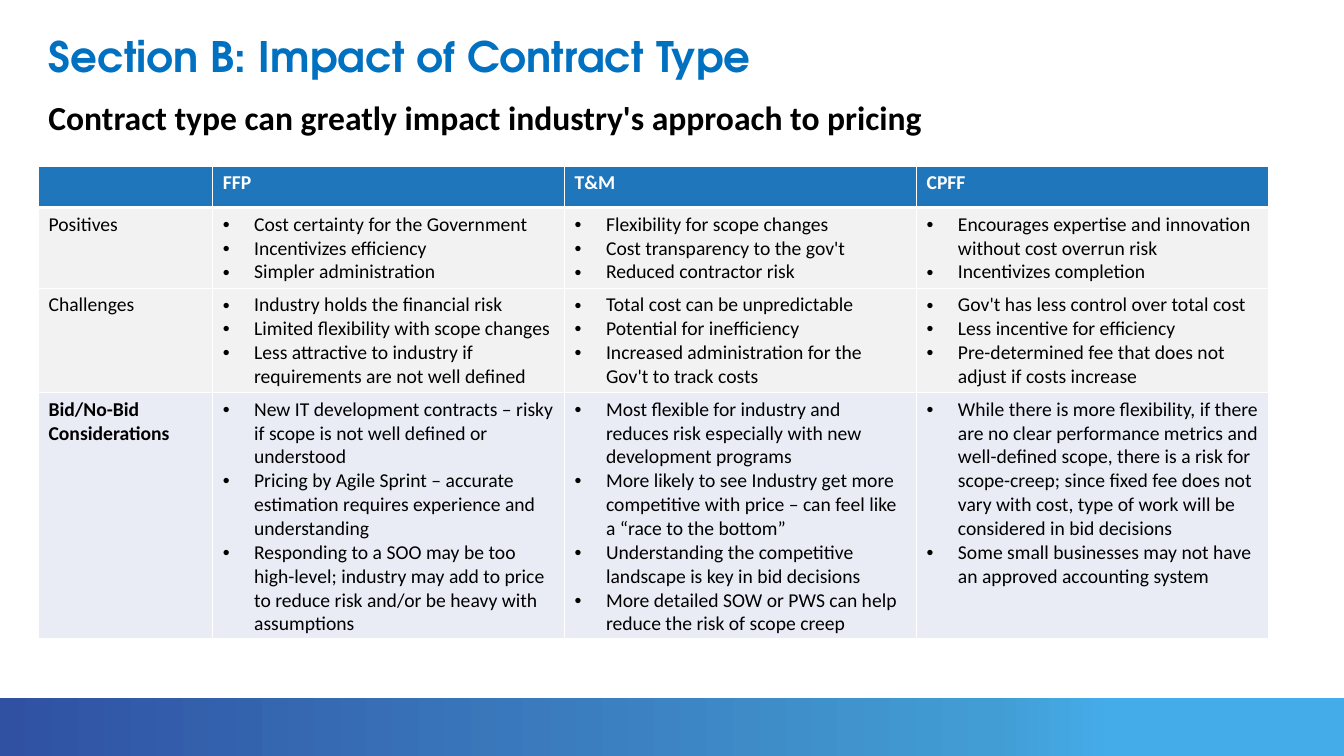
import dataclasses

import lxml.etree
import pptx
import pptx.dml.color
import pptx.enum.shapes
import pptx.enum.text
import pptx.oxml.ns
import pptx.util

Cm = pptx.util.Cm
Pt = pptx.util.Pt
qn = pptx.oxml.ns.qn

COLORS = {
    "title": "0070C0",
    "black": "000000",
    "white": "FFFFFF",
    "header": "2076BB",
    "grey": "F2F2F2",
    "lavender": "E9EBF5",
}
BAR_STOPS = {0: "3051A2", 74: "429DD4", 83: "45ACEA", 100: "45ACEA"}
BODY_FONT = "Calibri"
LEFT = Cm(0.97)
COLUMN_WIDTHS = [4.39, 8.87, 8.87, 8.87]
BULLET_INDENT = Cm(0.79)


@dataclasses.dataclass
class TableRow:
    label: str
    cells: list[list[str]]
    height: float
    fill: str
    label_bold: bool = False


HEADINGS = ["", "FFP", "T&M", "CPFF"]
HEADER_HEIGHT = 1.04
ROWS = [
    TableRow("Positives", [
        ["Cost certainty for the Government", "Incentivizes efficiency",
         "Simpler administration"],
        ["Flexibility for scope changes", "Cost transparency to the gov't",
         "Reduced contractor risk"],
        ["Encourages expertise and innovation without cost overrun risk",
         "Incentivizes completion"],
    ], 2.02, "grey"),
    TableRow("Challenges", [
        ["Industry holds the financial risk",
         "Limited flexibility with scope changes",
         "Less attractive to industry if requirements are not well defined"],
        ["Total cost can be unpredictable", "Potential for inefficiency",
         "Increased administration for the Gov't to track costs"],
        ["Gov't has less control over total cost",
         "Less incentive for efficiency",
         "Pre-determined fee that does not adjust if costs increase"],
    ], 2.6, "grey"),
    TableRow("Bid/No-Bid Considerations", [
        ["New IT development contracts – risky if scope is not well defined "
         "or understood",
         "Pricing by Agile Sprint – accurate estimation requires experience "
         "and understanding",
         "Responding to a SOO may be too high-level; industry may add to "
         "price to reduce risk and/or be heavy with assumptions"],
        ["Most flexible for industry and reduces risk especially with new "
         "development programs",
         "More likely to see Industry get more competitive with price – can "
         "feel like a “race to the bottom”",
         "Understanding the competitive landscape is key in bid decisions",
         "More detailed SOW or PWS can help reduce the risk of scope creep"],
        ["While there is more flexibility, if there are no clear performance "
         "metrics and well-defined scope, there is a risk for scope-creep; "
         "since fixed fee does not vary with cost, type of work will be "
         "considered in bid decisions",
         "Some small businesses may not have an approved accounting system"],
    ], 6.2, "lavender", label_bold=True),
]


def rgb(name: str) -> pptx.dml.color.RGBColor:
    return pptx.dml.color.RGBColor.from_string(COLORS[name])


def style(para, size: float, color: str, bold: bool, face: str = BODY_FONT) -> None:
    para.alignment = pptx.enum.text.PP_ALIGN.LEFT
    para.font.name = face
    para.font.size = Pt(size)
    para.font.bold = bold
    para.font.color.rgb = rgb(color)


def add_bullet(para) -> None:
    properties = para._p.get_or_add_pPr()
    properties.set("marL", str(BULLET_INDENT))
    properties.set("indent", str(-BULLET_INDENT))
    font = lxml.etree.SubElement(properties, qn("a:buFont"))
    font.set("typeface", "Arial")
    lxml.etree.SubElement(properties, qn("a:buChar")).set("char", "•")


def set_borders(cell, top: float, bottom: float) -> None:
    properties = cell._tc.get_or_add_tcPr()
    sides = {"L": 1, "R": 1, "T": top, "B": bottom}
    for index, (side, width) in enumerate(sides.items()):
        line = lxml.etree.Element(qn(f"a:ln{side}"), w=str(Pt(width)))
        fill = lxml.etree.SubElement(line, qn("a:solidFill"))
        lxml.etree.SubElement(fill, qn("a:srgbClr")).set("val", COLORS["white"])
        properties.insert(index, line)


def fill_cell(cell, lines: list[str], fill: str, color: str = "black",
              bold: bool = False, bullets: bool = False) -> None:
    cell.fill.solid()
    cell.fill.fore_color.rgb = rgb(fill)
    cell.text = "\n".join(lines)
    for para in cell.text_frame.paragraphs:
        if bullets:
            add_bullet(para)
        style(para, 14, color, bold)


def add_bar(page) -> None:
    bar = page.shapes.add_shape(pptx.enum.shapes.MSO_SHAPE.RECTANGLE,
                                0, Cm(17.58), Cm(33.87), Cm(1.47))
    bar.shadow.inherit = False
    bar.line.fill.background()
    bar.fill.gradient()
    bar.fill.gradient_angle = 0
    stop_list = bar._element.spPr.find(".//" + qn("a:gsLst"))
    for stop in list(stop_list):
        stop_list.remove(stop)
    for position, color in BAR_STOPS.items():
        stop = lxml.etree.SubElement(stop_list, qn("a:gs"), pos=str(position * 1000))
        lxml.etree.SubElement(stop, qn("a:srgbClr")).set("val", color)


def add_heading(page) -> None:
    title = page.shapes.title
    title.left, title.top, title.width, title.height = LEFT, Cm(0.64), Cm(29.21), Cm(1.55)
    title.text_frame.text = "Section B: Impact of Contract Type"
    title.text_frame.vertical_anchor = pptx.enum.text.MSO_ANCHOR.MIDDLE
    style(title.text_frame.paragraphs[0], 30, "title", True, "TeX Gyre Adventor")

    subtitle = page.shapes.add_textbox(LEFT, Cm(2.31), Cm(32.18), Cm(1.27))
    subtitle.text_frame.word_wrap = True
    subtitle.text_frame.text = "Contract type can greatly impact industry's approach to pricing"
    style(subtitle.text_frame.paragraphs[0], 24, "black", True)


def add_comparison(page) -> None:
    heights = [HEADER_HEIGHT] + [row.height for row in ROWS]
    table = page.shapes.add_table(len(heights), len(COLUMN_WIDTHS), LEFT, Cm(4.19),
                                  Cm(sum(COLUMN_WIDTHS)), Cm(sum(heights))).table
    table.horz_banding = False
    for column, width in zip(table.columns, COLUMN_WIDTHS):
        column.width = Cm(width)
    for table_row, height in zip(table.rows, heights):
        table_row.height = Cm(height)

    for column, heading in enumerate(HEADINGS):
        fill_cell(table.cell(0, column), [heading], "header", "white", bold=True)
    for number, row in enumerate(ROWS, start=1):
        fill_cell(table.cell(number, 0), [row.label], row.fill, bold=row.label_bold)
        for column, lines in enumerate(row.cells, start=1):
            fill_cell(table.cell(number, column), lines, row.fill, bullets=True)

    # A thicker rule separates the header from the body
    for number, table_row in enumerate(table.rows):
        for cell in table_row.cells:
            set_borders(cell, top=3 if number == 1 else 1, bottom=3 if number == 0 else 1)


def main() -> None:
    deck = pptx.Presentation()
    deck.slide_width, deck.slide_height = Cm(33.87), Cm(19.05)
    page = deck.slides.add_slide(deck.slide_layouts.get_by_name("Title Only"))
    # Footer band, heading, then comparison table
    add_bar(page)
    add_heading(page)
    add_comparison(page)
    deck.save("out.pptx")


if __name__ == "__main__":
    main()
